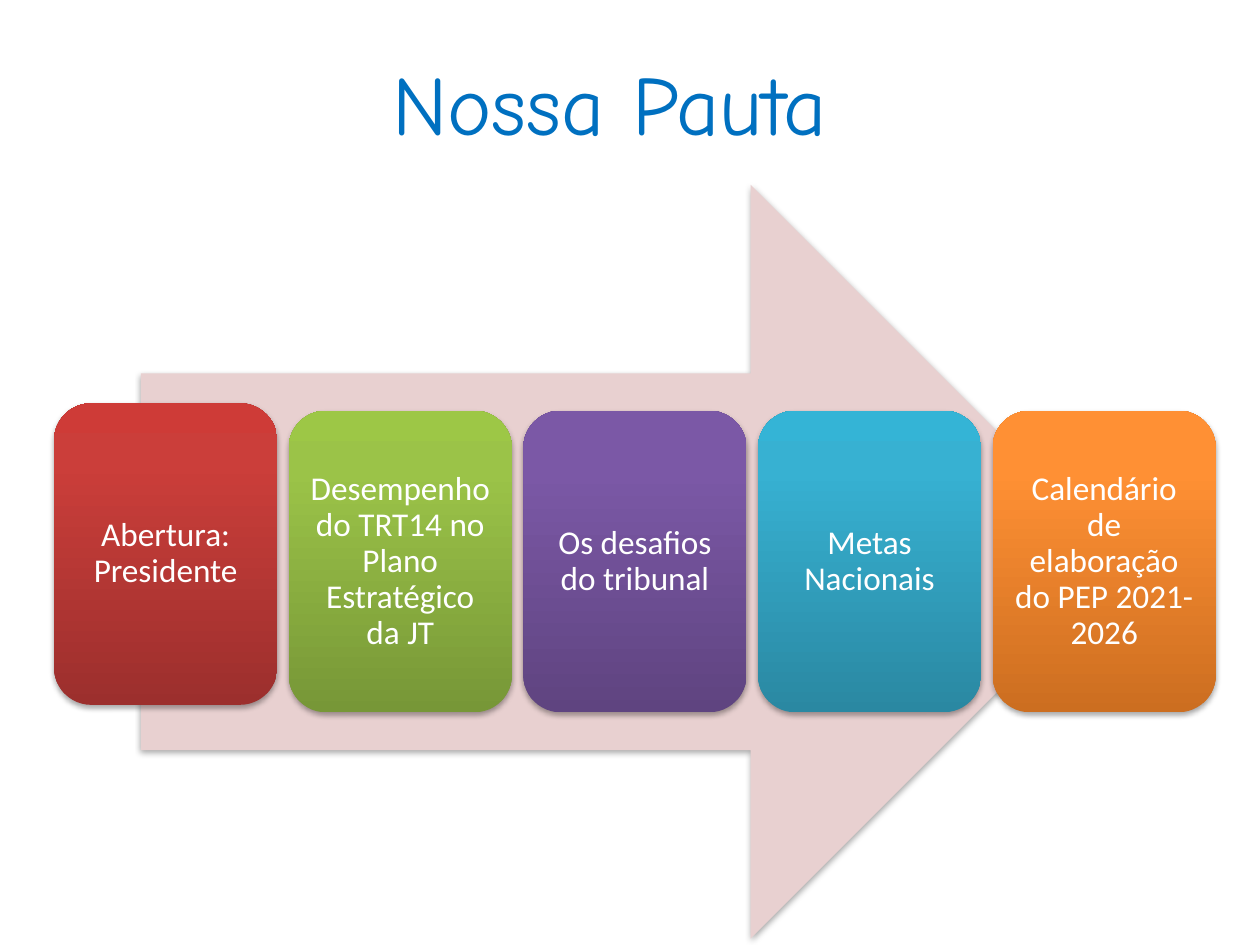
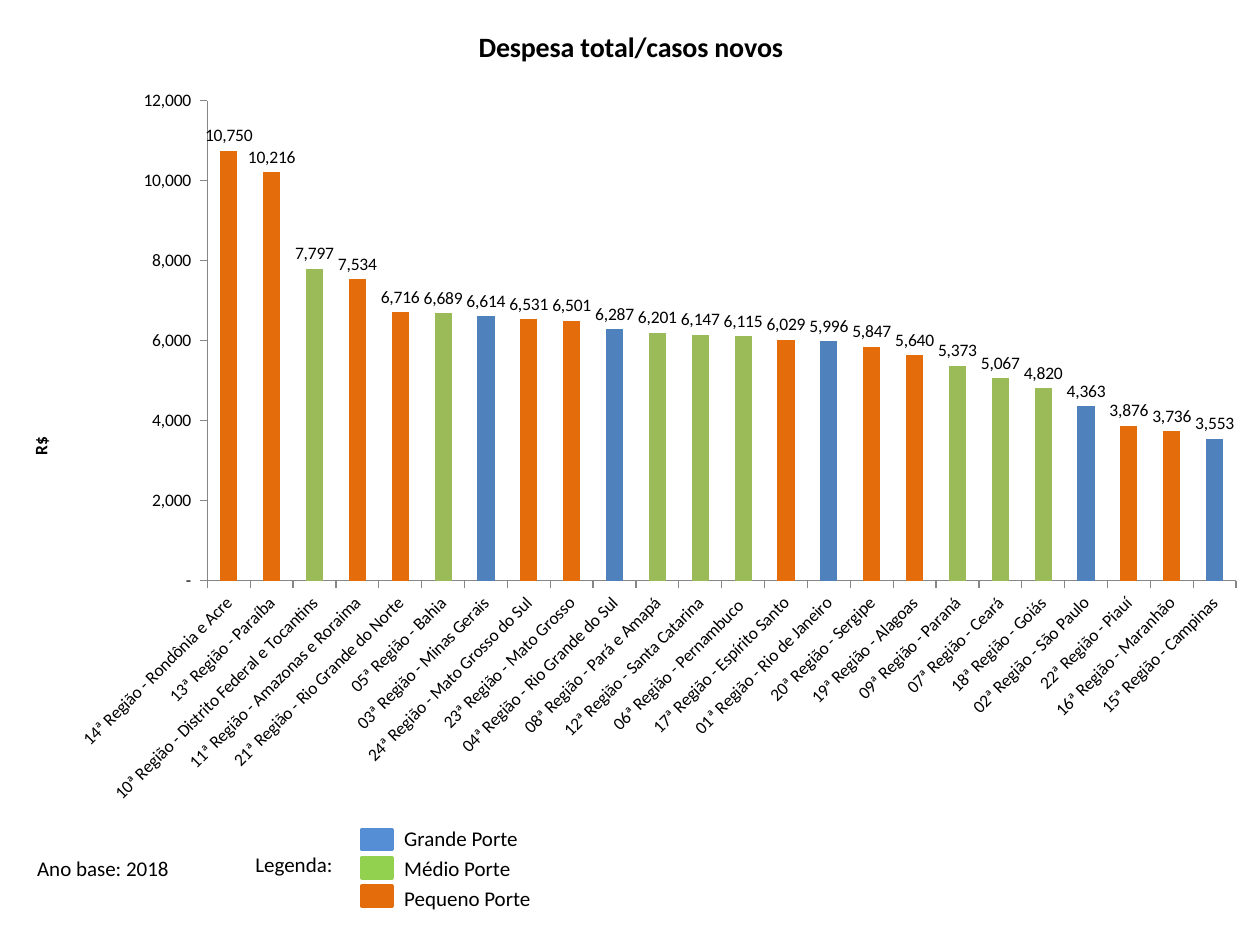
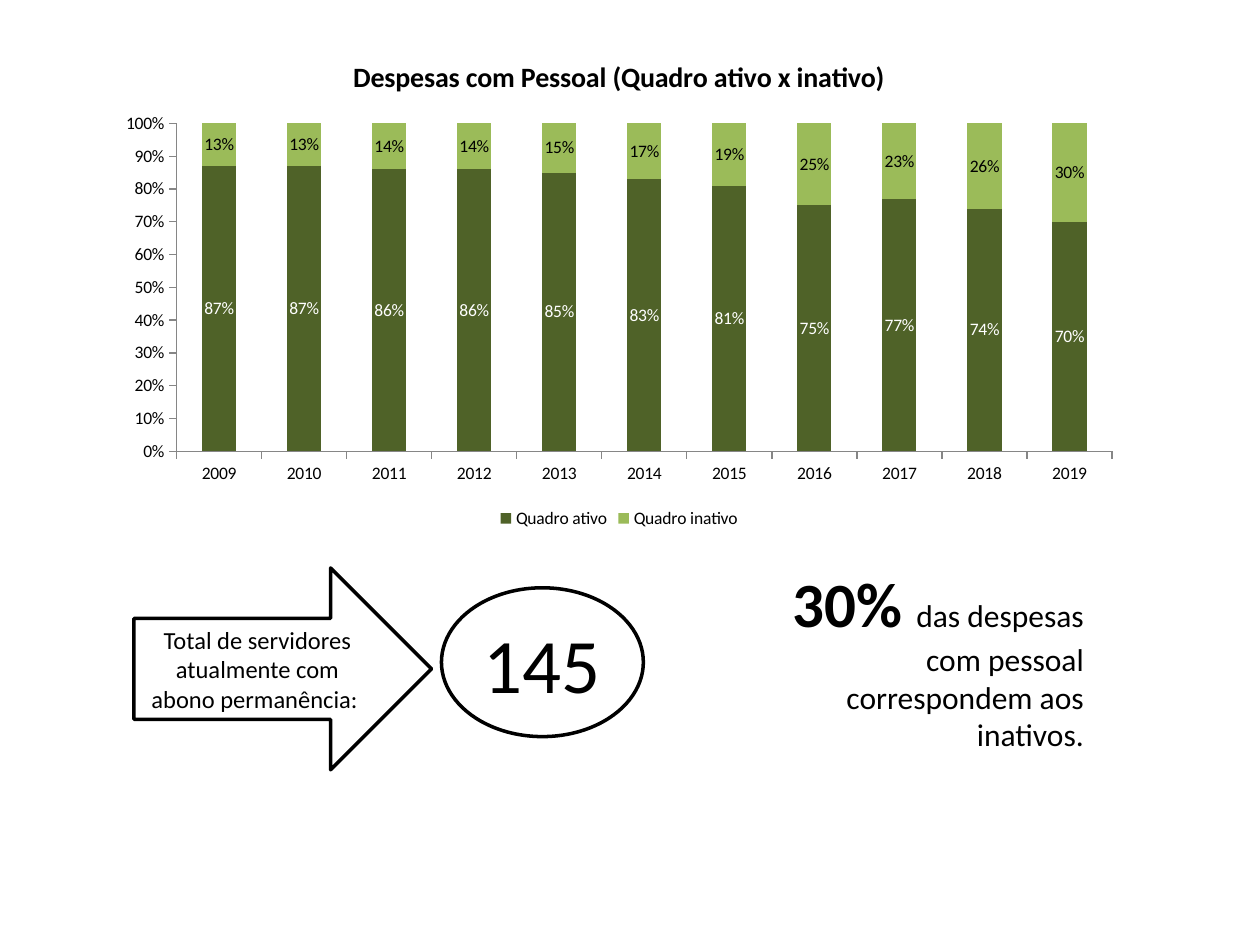
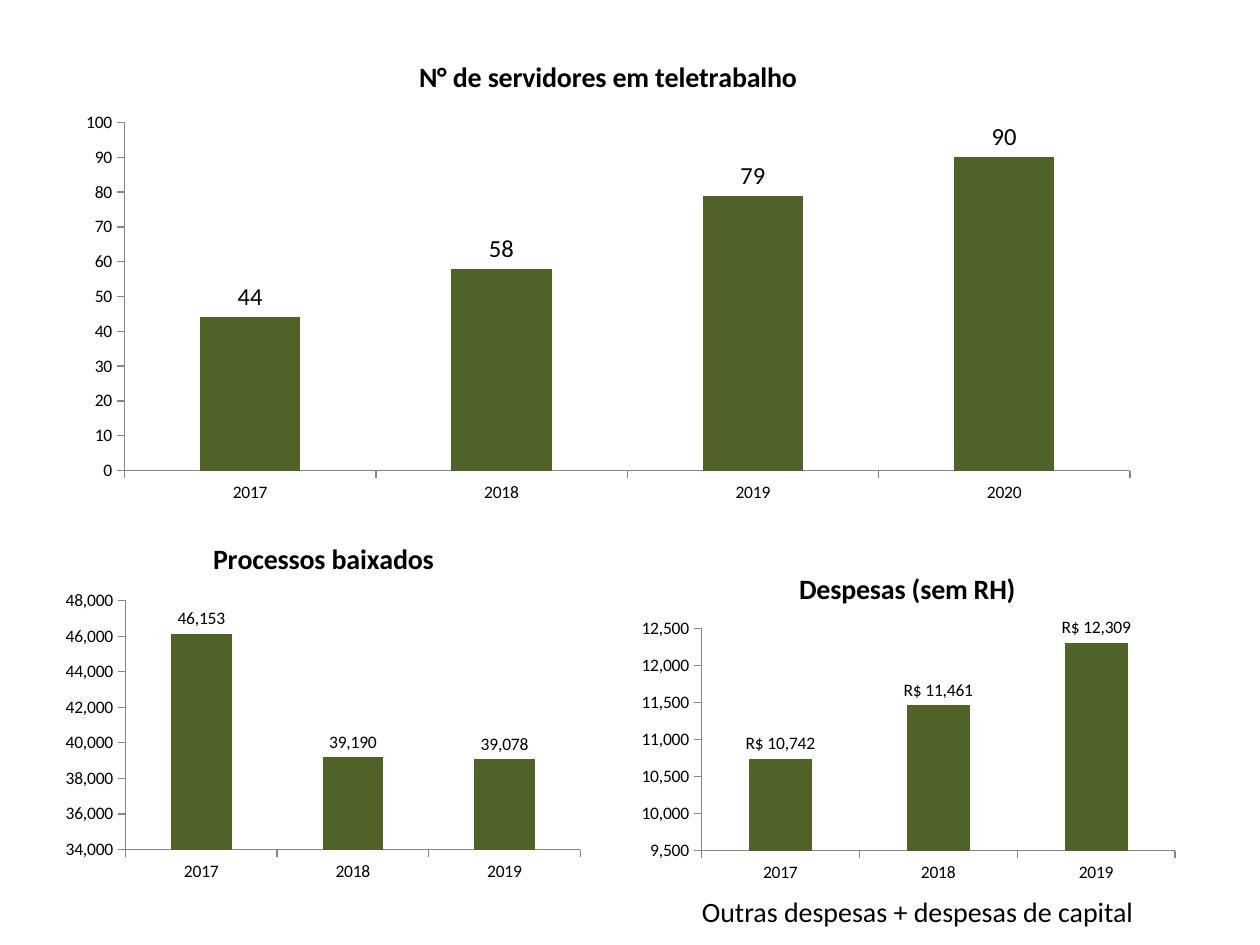
from copy import deepcopy

from lxml.etree import SubElement
from pptx import Presentation
from pptx.chart.data import CategoryChartData
from pptx.dml.color import RGBColor
from pptx.enum.chart import XL_CHART_TYPE, XL_LABEL_POSITION, XL_LEGEND_POSITION
from pptx.enum.shapes import MSO_SHAPE
from pptx.enum.text import MSO_ANCHOR, PP_ALIGN
from pptx.oxml.ns import qn
from pptx.util import Cm, Pt

COLORS = {
    "black": "000000",
    "white": "FFFFFF",
    "title": "0070C0",
    "pale arrow": "E8D0D0",
    "axis": "868686",
    "dark green": "4F6228",
    "light green": "9BBB59",
    "blue": "4F81BD",
    "orange": "E46C0A",
    "legend blue": "558ED5",
    "legend green": "92D050",
}
RGB = {name: RGBColor.from_string(value) for name, value in COLORS.items()}
FONT = "Calibri"


def write(frame, text, size, color="black", font=FONT, align=PP_ALIGN.LEFT, wrap=True):
    """Fill a text frame with one uniform paragraph and return it."""
    frame.word_wrap = wrap
    paragraph = frame.paragraphs[0]
    paragraph.text = text
    paragraph.alignment = align
    paragraph.font.size = Pt(size)
    paragraph.font.name = font
    paragraph.font.color.rgb = RGB[color]
    return paragraph


def add_column_chart(slide, title, box, plot, categories, series, axis_format="#,##0",
                     label_format="#,##0", scale=None, label_size=10,
                     kind=XL_CHART_TYPE.COLUMN_CLUSTERED):
    """Add a column chart; box and plot are (left, top, width, height) in cm on the slide.

    Each series is (name, values, fill colour, label colour).
    """
    data = CategoryChartData()
    data.categories = categories
    for name, values, _, _ in series:
        data.add_series(name, values)
    chart = slide.shapes.add_chart(kind, *map(Cm, box), data).chart
    chart.font.name = FONT
    chart.font.size = Pt(10)
    chart.font.color.rgb = RGB["black"]
    chart.has_legend = False
    chart.has_title = True
    heading = chart.chart_title.text_frame.paragraphs[0]
    heading.text = title
    heading.font.size = Pt(16)
    heading.font.bold = True
    chart.chart_title.include_in_layout = False

    chart.value_axis.has_major_gridlines = False
    chart.value_axis.tick_labels.number_format = axis_format
    chart.value_axis.tick_labels.number_format_is_linked = False
    if scale:
        (chart.value_axis.minimum_scale, chart.value_axis.maximum_scale,
         chart.value_axis.major_unit) = scale
    for axis in (chart.category_axis, chart.value_axis):
        axis.format.line.color.rgb = RGB["axis"]

    columns = chart.plots[0]
    columns.gap_width = 150
    columns.vary_by_categories = False
    for column, (_, _, fill, label_color) in zip(columns.series, series):
        column.format.fill.solid()
        column.format.fill.fore_color.rgb = RGB[fill]
        column.invert_if_negative = False
        labels = column.data_labels
        labels.show_value = True
        labels.number_format = label_format
        labels.number_format_is_linked = False
        labels.font.size = Pt(label_size)
        labels.font.color.rgb = RGB[label_color]
        labels.position = (XL_LABEL_POSITION.OUTSIDE_END
                           if kind == XL_CHART_TYPE.COLUMN_CLUSTERED
                           else XL_LABEL_POSITION.CENTER)

    plot_area = next(chart.element.iter(qn("c:plotArea")))
    layout = plot_area.find(qn("c:layout"))
    if layout is None:
        layout = plot_area.makeelement(qn("c:layout"))
        plot_area.insert(0, layout)
    manual = SubElement(layout, qn("c:manualLayout"))
    left, top, width, height = box
    settings = {
        "layoutTarget": "inner", "xMode": "edge", "yMode": "edge",
        "x": (plot[0] - left) / width, "y": (plot[1] - top) / height,
        "w": plot[2] / width, "h": plot[3] / height,
    }
    for tag, value in settings.items():
        SubElement(manual, qn(f"c:{tag}")).set("val", str(value))
    return chart


presentation = Presentation()
presentation.slide_width = Cm(25.4)
presentation.slide_height = Cm(19.05)
agenda, cost, staff, telework = (
    presentation.slides.add_slide(presentation.slide_layouts[6]) for _ in range(4))

# Slide 1: agenda
path_arrow = agenda.shapes.add_shape(
    MSO_SHAPE.RIGHT_ARROW, Cm(2.84), Cm(3.73), Cm(19.89), Cm(15.19))
path_arrow.fill.solid()
path_arrow.fill.fore_color.rgb = RGB["pale arrow"]
shadowed = [path_arrow]

topics = [
    ("Abertura: Presidente", ["9C2F2D", "CB3E3A", "CE3B37"]),
    ("Desempenho do TRT14 no Plano Estratégico da JT", ["779737", "9BC348", "9DC746"]),
    ("Os desafios do tribunal", ["5F4480", "7B58A6", "7C57A8"]),
    ("Metas Nacionais", ["2A88A2", "37B1D2", "34B4D6"]),
    ("Calendário de elaboração do PEP 2021-2026", ["CC6E20", "FF9034", "FF9136"]),
]
for index, (topic, shades) in enumerate(topics):
    card = agenda.shapes.add_shape(
        MSO_SHAPE.ROUNDED_RECTANGLE, Cm(1.09 + 4.73 * index), Cm(8.28 if index else 8.13),
        Cm(4.5), Cm(6.08))
    card.fill.gradient()
    card.fill.gradient_angle = 90
    stop_list = next(card.element.iter(qn("a:gsLst")))
    stop_list.append(deepcopy(stop_list[-1]))
    for stop, position, shade in zip(card.fill.gradient_stops, (0, 0.8, 1), shades):
        stop.position = position
        stop.color.rgb = RGBColor.from_string(shade)
    frame = card.text_frame
    frame.margin_left = frame.margin_right = frame.margin_top = frame.margin_bottom = Cm(0.2)
    frame.vertical_anchor = MSO_ANCHOR.MIDDLE
    write(frame, topic, 19, "white", align=PP_ALIGN.CENTER).line_spacing = 0.9
    shadowed.append(card)

for shape in shadowed:
    shape.line.fill.background()
    shape.shadow.inherit = False
    effects = shape.element.spPr.find(qn("a:effectLst"))
    shadow = SubElement(effects, qn("a:outerShdw"), blurRad="40000", dist="23000",
                        dir="5400000", rotWithShape="0")
    shadow_color = SubElement(shadow, qn("a:srgbClr"), val=COLORS["black"])
    SubElement(shadow_color, qn("a:alpha"), val="35000")

agenda_title = agenda.shapes.add_textbox(Cm(7.49), Cm(0.91), Cm(9.61), Cm(2.31))
write(agenda_title.text_frame, "Nossa Pauta", 48, "title", "Comic Neue", PP_ALIGN.CENTER)

# Slide 2: cost per new case, coloured by court size
SIZE_COLORS = {"G": "blue", "M": "light green", "P": "orange"}
courts = [
    ("14ª Região - Rondônia e Acre", 10750, "P"),
    ("13ª Região - Paraíba", 10216, "P"),
    ("10ª Região - Distrito Federal e Tocantins", 7797, "M"),
    ("11ª Região - Amazonas e Roraima", 7534, "P"),
    ("21ª Região - Rio Grande do Norte", 6716, "P"),
    ("05ª Região - Bahia", 6689, "M"),
    ("03ª Região - Minas Gerais", 6614, "G"),
    ("24ª Região - Mato Grosso do Sul", 6531, "P"),
    ("23ª Região - Mato Grosso", 6501, "P"),
    ("04ª Região - Rio Grande do Sul", 6287, "G"),
    ("08ª Região - Pará e Amapá", 6201, "M"),
    ("12ª Região - Santa Catarina", 6147, "M"),
    ("06ª Região - Pernambuco ", 6115, "M"),
    ("17ª Região - Espírito Santo", 6029, "P"),
    ("01ª Região - Rio de Janeiro", 5996, "G"),
    ("20ª Região - Sergipe", 5847, "P"),
    ("19ª Região - Alagoas", 5640, "P"),
    ("09ª Região - Paraná", 5373, "M"),
    ("07ª Região - Ceará", 5067, "M"),
    ("18ª Região - Goiás", 4820, "M"),
    ("02ª Região - São Paulo", 4363, "G"),
    ("22ª Região - Piauí", 3876, "P"),
    ("16ª Região - Maranhão", 3736, "P"),
    ("15ª Região - Campinas", 3553, "G"),
]
regions, costs, sizes = zip(*courts)
cost_title = "Despesa total/casos novos"
cost_chart = add_column_chart(
    cost, cost_title, (0.02, 0, 25.4, 16.51), (4.18, 2.03, 20.74, 9.68), regions,
    [(cost_title, costs, "light green", "black")],
    axis_format='_(* #,##0_);_(* \\(#,##0\\);_(* "-"_);_(@_)', scale=(0, 12000, 2000))
for index, size in enumerate(sizes):
    if size != "M":
        fill = cost_chart.series[0].points[index].format.fill
        fill.solid()
        fill.fore_color.rgb = RGB[SIZE_COLORS[size]]

cost_chart.category_axis.tick_labels.font.size = Pt(10)
category_text = next(cost_chart.element.iter(qn("c:catAx"))).find(qn("c:txPr"))
category_text.find(qn("a:bodyPr")).set("rot", "-2700000")

unit = cost_chart.value_axis.axis_title.text_frame.paragraphs[0]
unit.text = "R$"
unit.font.size = Pt(10)
unit.font.bold = True
unit_title = next(cost_chart.element.iter(qn("c:valAx"))).find(qn("c:title"))
unit_place = SubElement(unit_title.find(qn("c:layout")), qn("c:manualLayout"))
for tag, value in {"xMode": "edge", "yMode": "edge", "x": 0.02, "y": 0.53}.items():
    SubElement(unit_place, qn(f"c:{tag}")).set("val", str(value))

captions = [("Ano base: 2018", 0.5, 17.12, 5.21), ("Legenda:", 4.9, 17.04, 2.21)]
court_sizes = [("Grande Porte", "legend blue"), ("Médio Porte", "legend green"),
               ("Pequeno Porte", "orange")]
for row, (label, color) in enumerate(court_sizes):
    swatch = cost.shapes.add_shape(
        MSO_SHAPE.RECTANGLE, Cm(7.3), Cm(16.72 + 0.57 * row), Cm(0.61), Cm(0.41))
    swatch.shadow.inherit = False
    swatch.fill.solid()
    swatch.fill.fore_color.rgb = swatch.line.color.rgb = RGB[color]
    swatch.line.width = Pt(2)
    captions.append((label, 7.9, 16.52 + 0.6 * row, 3.2))
for caption, left, top, width in captions:
    caption_box = cost.shapes.add_textbox(Cm(left), Cm(top), Cm(width), Cm(0.77))
    write(caption_box.text_frame, caption, 12)

# Slide 3: active and retired staff
inactive_box = staff.shapes.add_textbox(Cm(15.09), Cm(11.25), Cm(7.01), Cm(4.11))
inactive = write(inactive_box.text_frame, "30% ", 18, align=PP_ALIGN.RIGHT)
inactive.runs[0].font.size = Pt(36)
inactive.runs[0].font.bold = True
inactive.add_run().text = "das despesas com pessoal correspondem aos inativos."

allowance = [
    (MSO_SHAPE.RIGHT_ARROW, (2.7, 11.45, 6, 4.07),
     "Total de servidores atualmente com abono permanência: ", 14, PP_ALIGN.CENTER, True),
    (MSO_SHAPE.OVAL, (8.9, 11.85, 4.07, 3), "145", 44, PP_ALIGN.LEFT, False),
]
for outline, box, text, size, align, wrap in allowance:
    figure = staff.shapes.add_shape(outline, *map(Cm, box))
    figure.shadow.inherit = False
    figure.fill.solid()
    figure.fill.fore_color.rgb = RGB["white"]
    figure.line.color.rgb = RGB["black"]
    figure.line.width = Pt(2)
    figure.text_frame.vertical_anchor = MSO_ANCHOR.MIDDLE
    write(figure.text_frame, text, size, align=align, wrap=wrap)

active_share = [0.87, 0.87, 0.86, 0.86, 0.85, 0.83, 0.81, 0.75, 0.77, 0.74, 0.7]
inactive_share = [round(1 - share, 2) for share in active_share]
staff_chart = add_column_chart(
    staff, "Despesas com Pessoal (Quadro ativo x inativo)",
    (2.13, 0.74, 20.7, 10.01), (3.56, 2.49, 18.86, 6.61),
    [str(year) for year in range(2009, 2020)],
    [("Quadro ativo", active_share, "dark green", "white"),
     ("Quadro inativo", inactive_share, "light green", "black")],
    axis_format="0%", label_format="0%", scale=(0, 1, 0.1),
    kind=XL_CHART_TYPE.COLUMN_STACKED_100)
staff_chart.plots[0].overlap = 100
staff_chart.has_legend = True
staff_chart.legend.position = XL_LEGEND_POSITION.BOTTOM
staff_chart.legend.include_in_layout = False

# Slide 4: telework, closed cases and expenses
yearly_charts = [
    ("Processos baixados", (1.12, 10.51, 10.8, 7.39), (2.53, 12.11, 9.17, 5.02),
     [46153, 39190, 39078], "#,##0", (34000, 48000, 2000), 10),
    ("Despesas (sem RH)", (12.7, 11.12, 11.18, 6.81), (14.14, 12.67, 9.55, 4.48),
     [10742, 11461, 12309], '"R$"\\ #,##0', (9500, 12500, 500), 10),
    ("N° de servidores em teletrabalho", (1.3, 0.74, 21.92, 9.6), (2.51, 2.47, 20.27, 7.02),
     [44, 58, 79, 90], "#,##0", (0, 100, 10), 14),
]
for title, box, plot, values, label_format, scale, label_size in yearly_charts:
    years = [str(2017 + index) for index in range(len(values))]
    add_column_chart(telework, title, box, plot, years,
                     [("Series 1", values, "dark green", "black")],
                     label_format=label_format, scale=scale, label_size=label_size)

expense_note = telework.shapes.add_textbox(Cm(13.9), Cm(17.91), Cm(9.32), Cm(0.94))
write(expense_note.text_frame, "Outras despesas + despesas de capital", 16, wrap=False)

presentation.save("out.pptx")
